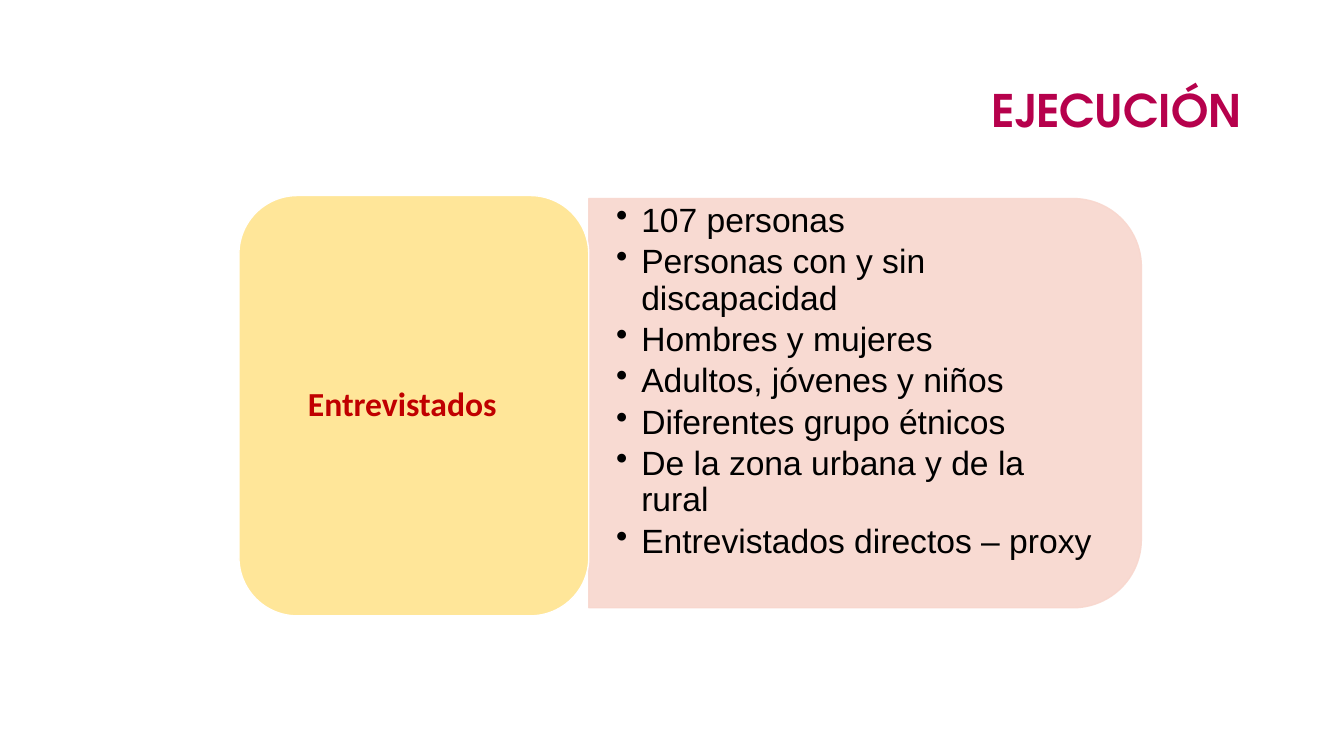
from dataclasses import dataclass

from lxml import etree
from pptx import Presentation
from pptx import util as u
from pptx.dml.color import RGBColor
from pptx.enum import shapes, text
from pptx.oxml.ns import qn

PX = 9144


@dataclass(frozen=True)
class Theme:
    title: str = "B6014C"
    label: str = "C00000"
    body: str = "000000"
    panel: str = "F8D7CE"
    card: str = "FFE699"
    edge: str = "FFFFFF"
    title_size: int = 32
    body_size: int = 24
    title_font: str = "TeX Gyre Adventor"
    label_font: str = "Calibri"
    body_font: str = "Arial"


def write(frame, lines, *, font, size, color, bold=False, align=text.PP_ALIGN.LEFT,
          anchor=text.MSO_ANCHOR.MIDDLE, margins=(10, 5, 10, 5), after=0, bullet_indent=0):
    frame.word_wrap = True
    frame.auto_size = text.MSO_AUTO_SIZE.NONE
    frame.vertical_anchor = anchor
    frame.margin_left, frame.margin_top, frame.margin_right, frame.margin_bottom = (
        margin * PX for margin in margins)
    for index, line in enumerate(lines):
        paragraph = frame.paragraphs[0] if index == 0 else frame.add_paragraph()
        paragraph.alignment = align
        paragraph.line_spacing = 0.9
        paragraph.space_before = u.Pt(0)
        paragraph.space_after = u.Pt(after)
        if bullet_indent:
            properties = paragraph._p.get_or_add_pPr()
            properties.set("marL", str(bullet_indent * PX))
            properties.set("indent", str(-bullet_indent * PX))
            etree.SubElement(properties, qn("a:buChar"), char="•")
        run = paragraph.add_run()
        run.text = line
        run.font.name = font
        run.font.size = u.Pt(size)
        run.font.bold = bold
        run.font.color.rgb = RGBColor.from_string(color)


class SlideBuilder:
    def __init__(self, presentation, theme):
        self.theme = theme
        self.slide = presentation.slides.add_slide(presentation.slide_layouts[5])

    def title(self, box, line):
        title = self.slide.shapes.title
        title.left, title.top, title.width, title.height = (side * PX for side in box)
        write(title.text_frame, [line], font=self.theme.title_font, size=self.theme.title_size,
              color=self.theme.title, bold=True, align=text.PP_ALIGN.RIGHT)

    def shape(self, kind, box, fill, edge, rotation=0, opacity=100):
        shape = self.slide.shapes.add_shape(kind, *(side * PX for side in box))
        shape.shadow.inherit = False
        shape.rotation = rotation
        shape.fill.solid()
        shape.fill.fore_color.rgb = RGBColor.from_string(fill)
        shape.line.color.rgb = RGBColor.from_string(edge)
        shape.line.width = u.Pt(1)
        if opacity < 100:
            for color in shape._element.spPr.iter(qn("a:srgbClr")):
                etree.SubElement(color, qn("a:alpha"), val=str(opacity * 1000))
        return shape

    def label_card(self, box, line):
        card = self.shape(shapes.MSO_SHAPE.ROUNDED_RECTANGLE, box,
                          self.theme.card, self.theme.edge)
        write(card.text_frame, [line], font=self.theme.label_font, size=self.theme.body_size,
              color=self.theme.label, bold=True, align=text.PP_ALIGN.CENTER,
              margins=(0, 0, 23, 0))

    def bullets(self, box, lines):
        frame = self.slide.shapes.add_textbox(*(side * PX for side in box)).text_frame
        write(frame, lines, font=self.theme.body_font, size=self.theme.body_size,
              color=self.theme.body, anchor=text.MSO_ANCHOR.TOP, margins=(27, 0, 27, 0),
              after=3.6, bullet_indent=25)


def main():
    presentation = Presentation()
    presentation.slide_width = 1333 * PX
    presentation.slide_height = 750 * PX
    theme = Theme()
    builder = SlideBuilder(presentation, theme)
    builder.title((92, 40, 1150, 145), "EJECUCIÓN")
    builder.shape(shapes.MSO_SHAPE.ROUND_2_SAME_RECTANGLE, (655, 126, 406, 548),
                  theme.panel, theme.panel, rotation=90, opacity=90)
    builder.bullets((584, 202, 528, 366), [
        "107 personas",
        "Personas con y sin discapacidad",
        "Hombres y mujeres",
        "Adultos, jóvenes y niños",
        "Diferentes grupo étnicos",
        "De la zona urbana y de la rural",
        "Entrevistados directos – proxy",
    ])
    builder.label_card((237, 194, 347, 417), "Entrevistados")
    presentation.save("out.pptx")


if __name__ == "__main__":
    main()
